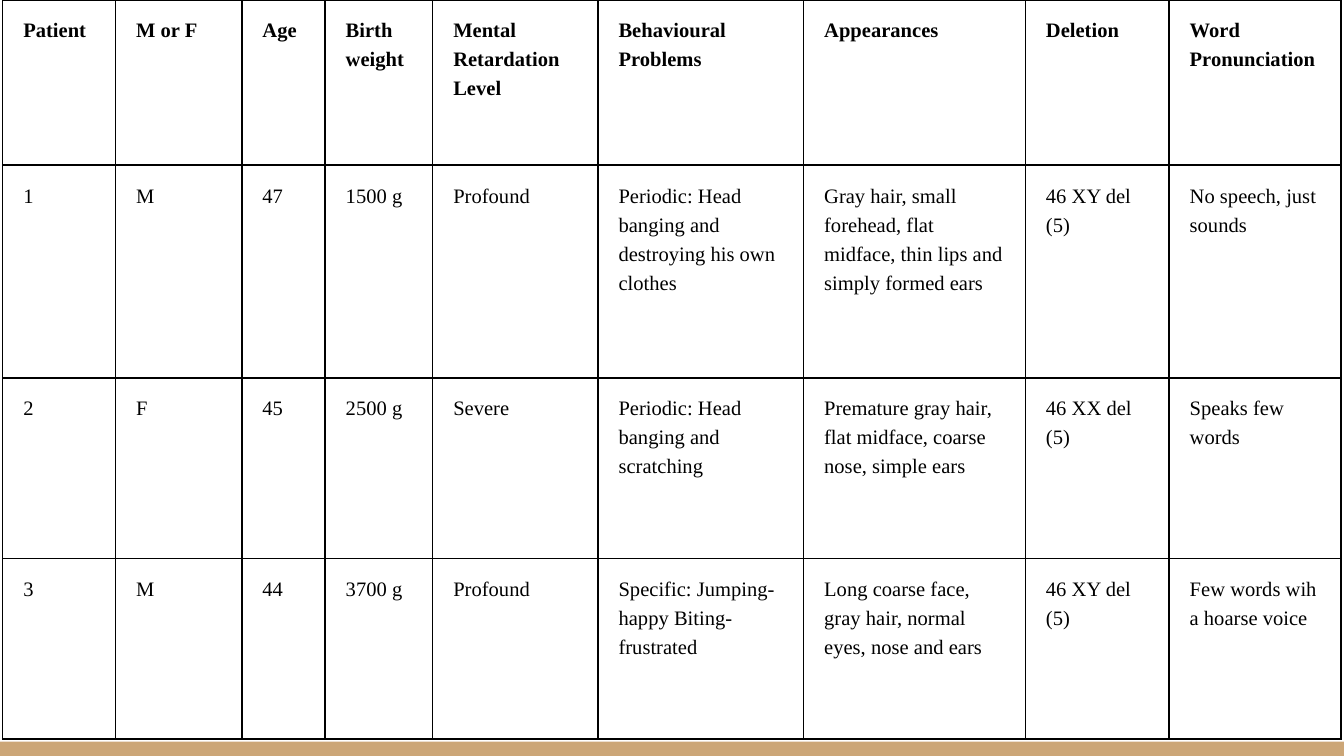
from lxml.etree import SubElement
from pptx import Presentation
from pptx.dml.color import RGBColor
from pptx.enum.shapes import MSO_SHAPE
from pptx.oxml.ns import qn
from pptx.util import Inches, Pt

BLACK = RGBColor(0x00, 0x00, 0x00)
WHITE = RGBColor(0xFF, 0xFF, 0xFF)
TAN = RGBColor(0xCC, 0xA6, 0x77)

# Percent of the slide's width and height
COLUMN_SHARES = [8.4, 9.4, 6.2, 8, 12.3, 15.3, 16.5, 10.7, 12.8]
ROW_SHARES = [21.85, 28.15, 23.9, 23.9]

PATIENTS = [
    ["Patient", "M or F", "Age", "Birth weight", "Mental Retardation Level",
     "Behavioural Problems", "Appearances", "Deletion", "Word Pronunciation"],
    ["1", "M", "47", "1500 g", "Profound",
     "Periodic: Head banging and destroying his own clothes",
     "Gray hair, small forehead, flat midface, thin lips and simply formed ears",
     "46 XY del (5)", "No speech, just sounds"],
    ["2", "F", "45", "2500 g", "Severe",
     "Periodic: Head banging and scratching",
     "Premature gray hair, flat midface, coarse nose, simple ears",
     "46 XX del (5)", "Speaks few words"],
    ["3", "M", "44", "3700 g", "Profound",
     "Specific: Jumping-happy Biting- frustrated",
     "Long coarse face, gray hair, normal eyes, nose and ears",
     "46 XY del (5)", "Few words wih a hoarse voice"],
]


class SlideBuilder:
    font_name = "Times New Roman"
    font_size = Pt(11)
    line_spacing = 1.27
    space_after = Pt(12)
    indent = Pt(6)
    side_margin = Inches(0.07)
    top_margin = Inches(0.1)
    border_width = Pt(1)

    def __init__(self, presentation):
        self.width = presentation.slide_width
        self.height = presentation.slide_height
        self.slide = presentation.slides.add_slide(presentation.slide_layouts[6])
        background = self.slide.background.fill
        background.solid()
        background.fore_color.rgb = WHITE

    def across(self, percent):
        return round(self.width * percent / 100)

    def down(self, percent):
        return round(self.height * percent / 100)

    def band(self, top, height, color):
        band = self.slide.shapes.add_shape(
            MSO_SHAPE.RECTANGLE, 0, self.down(top), self.width, self.down(height))
        band.shadow.inherit = False
        band.fill.solid()
        band.fill.fore_color.rgb = color
        band.line.fill.background()

    def table(self, left, top, column_shares, row_shares, content):
        table = self.slide.shapes.add_table(
            len(row_shares), len(column_shares), self.across(left), self.down(top),
            self.across(sum(column_shares)), self.down(sum(row_shares))).table
        table.horz_banding = False
        table.first_row = False
        for column, share in zip(table.columns, column_shares):
            column.width = self.across(share)
        for row_number, (row, share) in enumerate(zip(table.rows, row_shares)):
            row.height = self.down(share)
            for cell, wording in zip(row.cells, content[row_number]):
                self.cell(cell, wording, bold=row_number == 0)

    def cell(self, cell, wording, bold):
        cell.margin_left = cell.margin_right = self.side_margin
        cell.margin_top = cell.margin_bottom = self.top_margin
        self.borders(cell)
        cell.fill.background()
        cell.text_frame.text = wording
        paragraph = cell.text_frame.paragraphs[0]
        paragraph.line_spacing = self.line_spacing
        paragraph.space_after = self.space_after
        for side in ("marL", "marR"):
            paragraph._p.get_or_add_pPr().set(side, str(self.indent))
        font = paragraph.runs[0].font
        font.name = self.font_name
        font.size = self.font_size
        font.bold = bold
        font.color.rgb = BLACK

    def borders(self, cell):
        properties = cell._tc.get_or_add_tcPr()
        for side in ("a:lnL", "a:lnR", "a:lnT", "a:lnB"):
            line = SubElement(properties, qn(side), w=str(self.border_width))
            solid = SubElement(line, qn("a:solidFill"))
            SubElement(solid, qn("a:srgbClr"), val=str(BLACK))


def main():
    presentation = Presentation()
    presentation.slide_width = Inches(10)
    presentation.slide_height = presentation.slide_width * 9 // 16
    builder = SlideBuilder(presentation)
    builder.band(98.1, 1.9, TAN)
    builder.table(0.2, 0, COLUMN_SHARES, ROW_SHARES, PATIENTS)
    presentation.save("out.pptx")


if __name__ == "__main__":
    main()
